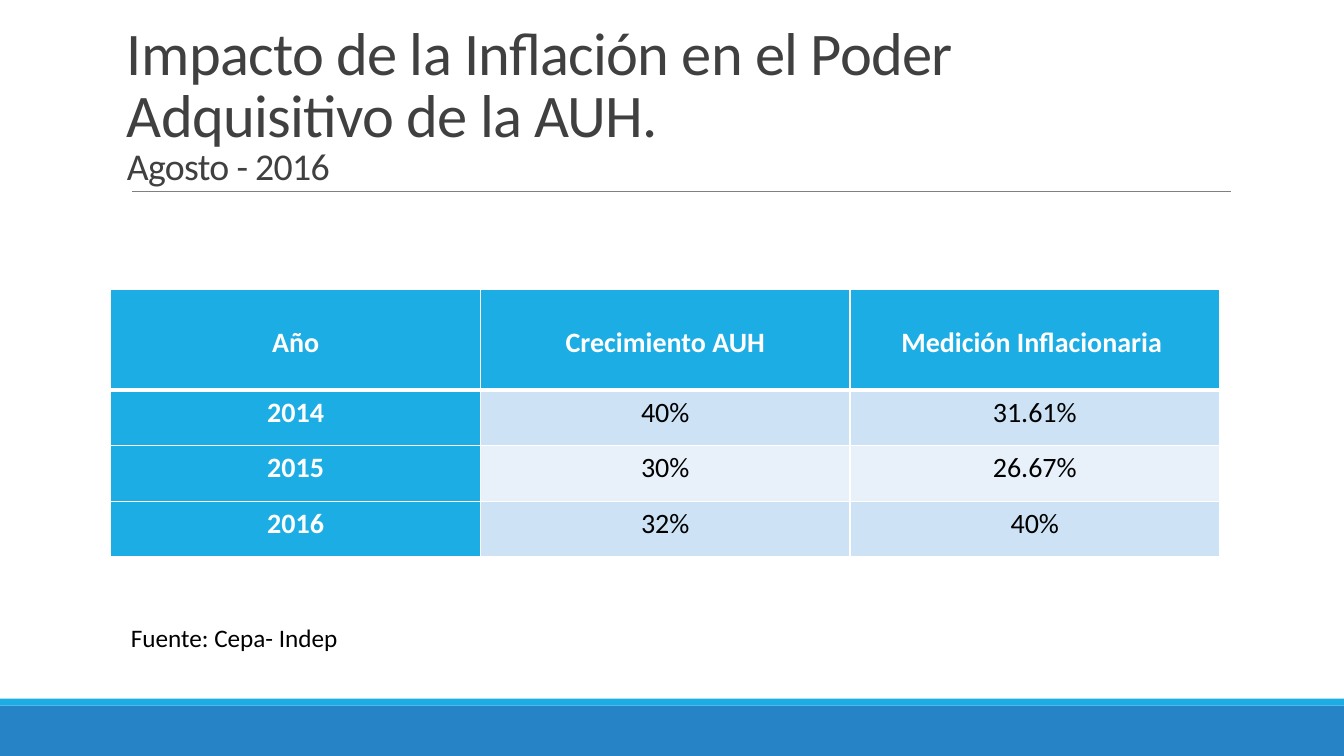
"""Build the slide on inflation and the purchasing power of the AUH."""
from dataclasses import dataclass

from lxml.etree import SubElement
from pptx import Presentation
from pptx.dml.color import RGBColor
from pptx.enum.shapes import MSO_CONNECTOR as Connector, MSO_SHAPE as Shape
from pptx.enum.text import MSO_ANCHOR as Anchor, MSO_AUTO_SIZE as AutoSize, PP_ALIGN as Align
from pptx.oxml.ns import qn
from pptx.slide import Slide
from pptx.table import _Cell as Cell
from pptx.util import Pt

FONT = "Calibri"
WHITE, BLACK, GREY = "FFFFFF", "000000", "404040"
CYAN, BLUE, RULE = "1CADE4", "2683C6", "808080"
BANDS = ("CDE3F5", "E8F1FA")
ROWS = (
    ("Año", "Crecimiento AUH", "Medición Inflacionaria "),
    ("2014", "40%", "31.61%"),
    ("2015", "30%", "26.67%"),
    ("2016", "32%", "40%"),
)


@dataclass(frozen=True)
class Bar:
    top: float
    height: float
    color: str


@dataclass(frozen=True)
class Style:
    size: float
    color: str
    bold: bool = False
    spacing: int = 0


BARS = (Bar(504, 36, BLUE), Bar(499, 5, CYAN))
TITLE = Style(43.2, GREY, spacing=-50)
SUBTITLE = Style(27, GREY, spacing=-50)
HEADING = Style(20, WHITE, bold=True)
VALUE = Style(20, BLACK)
SOURCE = Style(18, BLACK)


def rgb(color: str) -> RGBColor:
    return RGBColor.from_string(color)


def add_span(para, text: str, style: Style) -> None:
    span = para.add_run()
    span.text = text
    font = span.font
    font.name, font.size, font.bold = FONT, Pt(style.size), style.bold
    font.color.rgb = rgb(style.color)
    if style.spacing:
        span._r.get_or_add_rPr().set("spc", str(style.spacing))


def add_bar(page: Slide, bar: Bar) -> None:
    box = page.shapes.add_shape(Shape.RECTANGLE, 0, Pt(bar.top), Pt(960), Pt(bar.height))
    box.shadow.inherit = False
    box.fill.solid()
    box.fill.fore_color.rgb = rgb(bar.color)
    box.line.fill.background()


def add_rule(page: Slide) -> None:
    rule = page.shapes.add_connector(Connector.STRAIGHT, Pt(94.3), Pt(136.8), Pt(879), Pt(136.8))
    rule.line.color.rgb = rgb(RULE)
    rule.line.width = Pt(0.5)
    SubElement(rule._element.spPr, qn("a:effectLst"))


def fill_title(page: Slide) -> None:
    title = page.shapes.title
    title.left, title.top, title.width, title.height = Pt(83.5), Pt(23.8), Pt(792), Pt(114.5)
    frame = title.text_frame
    frame.auto_size, frame.vertical_anchor = AutoSize.NONE, Anchor.BOTTOM
    para = frame.paragraphs[0]
    para.alignment, para.line_spacing = Align.LEFT, 0.85
    add_span(para, "Impacto de la Inflación en el Poder Adquisitivo de la AUH.", TITLE)
    para.add_line_break()
    add_span(para, "Agosto - 2016", SUBTITLE)


def set_borders(cell: Cell, top: float, bottom: float) -> None:
    properties = cell._tc.get_or_add_tcPr()
    for side, width in (("L", 1), ("R", 1), ("T", top), ("B", bottom)):
        line = SubElement(properties, qn(f"a:ln{side}"), w=str(Pt(width)))
        SubElement(SubElement(line, qn("a:solidFill")), qn("a:srgbClr"), val=WHITE)


def fill_cell(cell: Cell, text: str, row: int, column: int) -> None:
    heading = row == 0 or column == 0
    set_borders(cell, 3 if row == 1 else 1, 3 if row == 0 else 1)
    cell.fill.solid()
    cell.fill.fore_color.rgb = rgb(CYAN if heading else BANDS[(row - 1) % 2])
    cell.margin_left = cell.margin_right = Pt(5)
    cell.margin_top = cell.margin_bottom = 0
    cell.vertical_anchor = Anchor.MIDDLE if row == 0 else Anchor.TOP
    para = cell.text_frame.paragraphs[0]
    para.alignment, para.line_spacing = Align.CENTER, 1.15
    add_span(para, text, HEADING if heading else VALUE)


def add_inflation_table(page: Slide) -> None:
    table = page.shapes.add_table(
        len(ROWS), len(ROWS[0]), Pt(79.2), Pt(206.8), Pt(792), Pt(191.1)
    ).table
    for column in table.columns:
        column.width = Pt(264)
    for row, texts in enumerate(ROWS):
        table.rows[row].height = Pt(39.7 if row else 72)
        for column, text in enumerate(texts):
            fill_cell(table.cell(row, column), text, row, column)


def add_source(page: Slide) -> None:
    frame = page.shapes.add_textbox(Pt(86.4), Pt(437.8), Pt(223.2), Pt(32.4)).text_frame
    frame.word_wrap = True
    frame.auto_size = AutoSize.SHAPE_TO_FIT_TEXT
    para = frame.paragraphs[0]
    para.alignment, para.line_spacing, para.space_after = Align.JUSTIFY, 1.15, Pt(10)
    add_span(para, "Fuente: Cepa- Indep", SOURCE)


def main() -> None:
    deck = Presentation()
    deck.slide_width, deck.slide_height = Pt(960), Pt(540)
    page = deck.slides.add_slide(deck.slide_layouts.get_by_name("Title Only"))
    for bar in BARS:
        add_bar(page, bar)
    add_rule(page)
    fill_title(page)
    add_inflation_table(page)
    add_source(page)
    deck.save("out.pptx")


if __name__ == "__main__":
    main()
